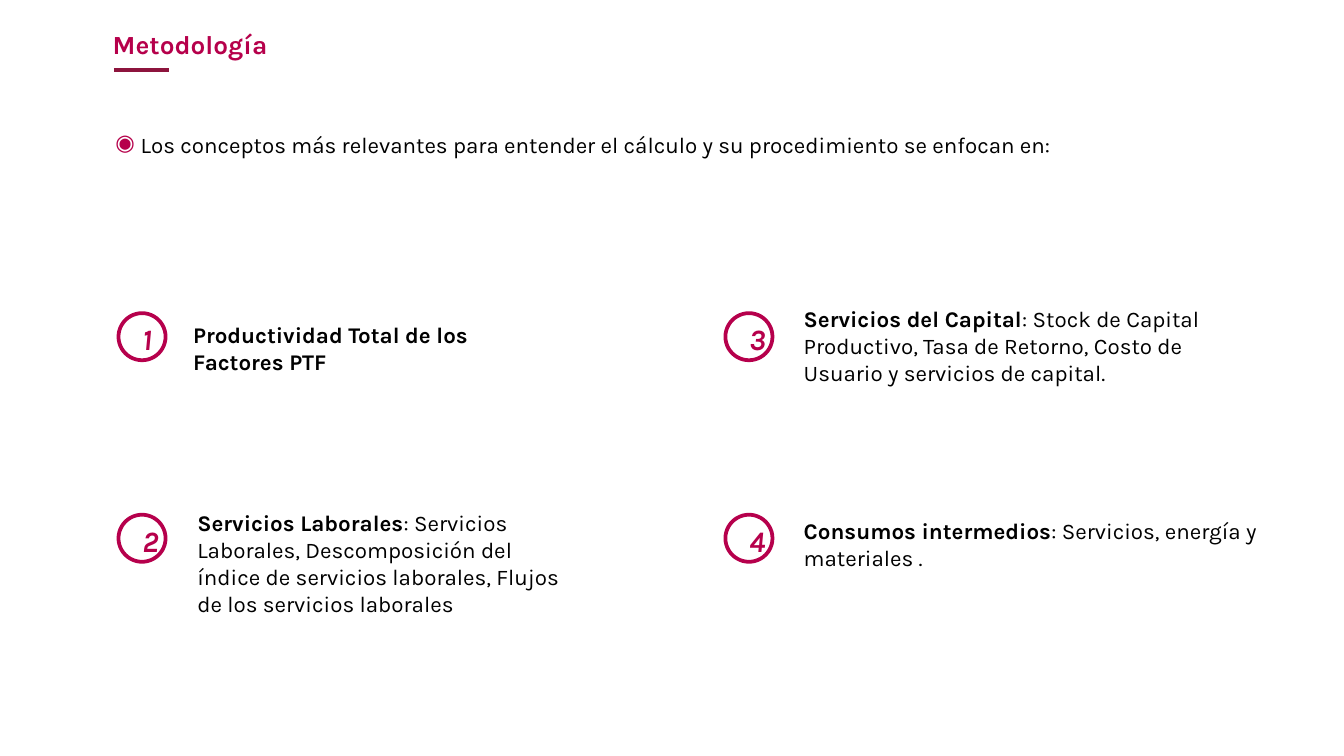
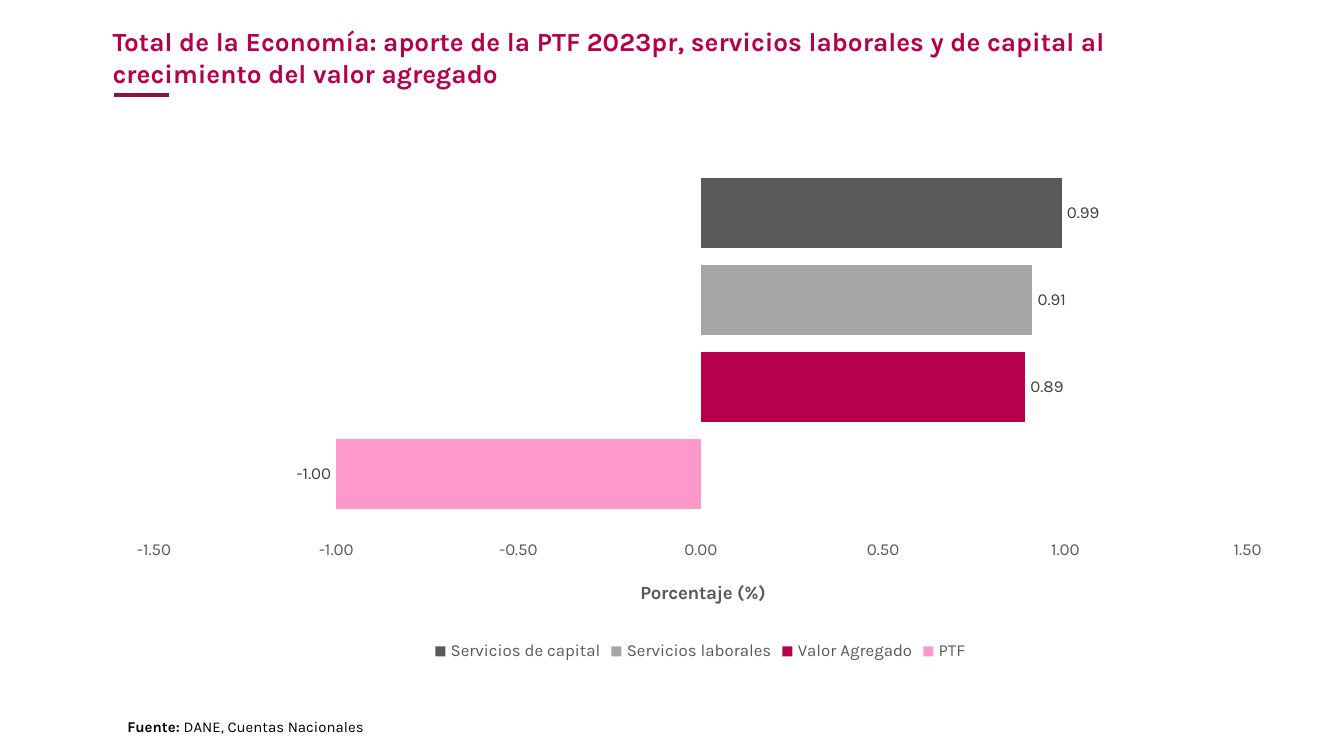
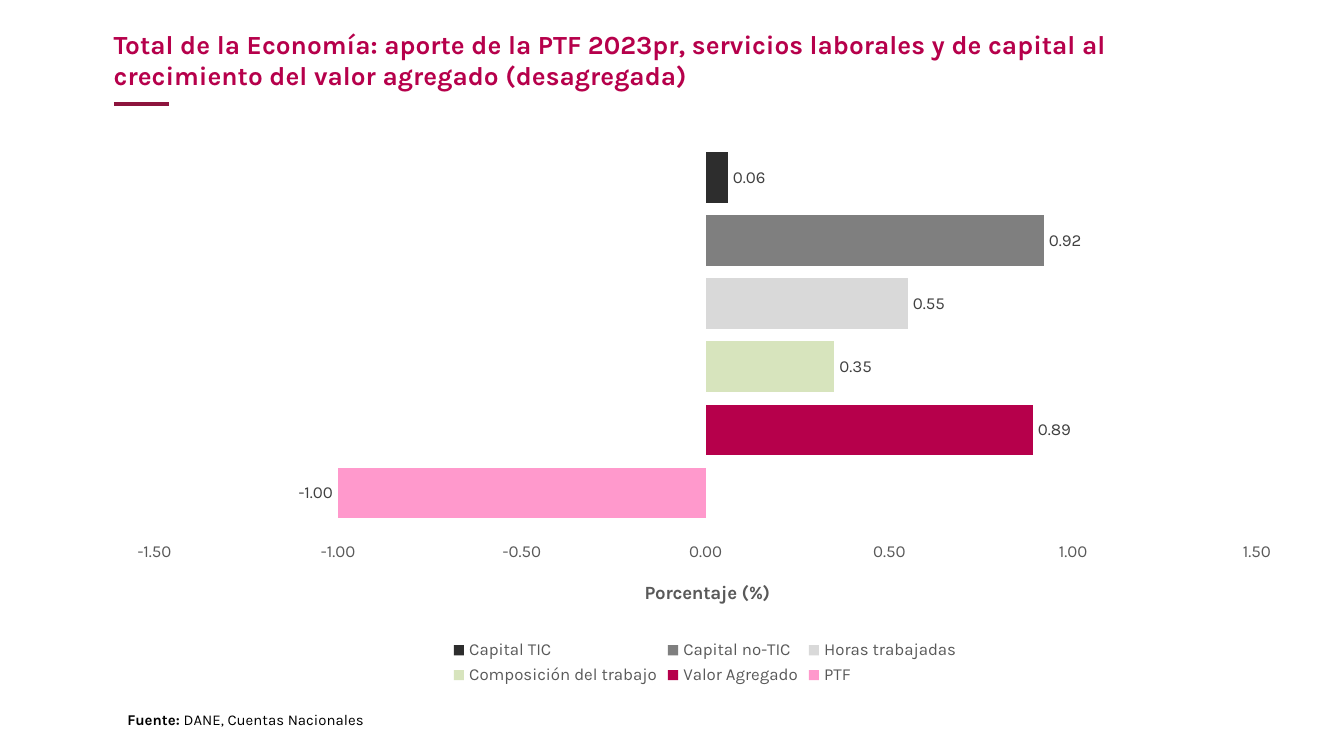
from lxml import etree
from pptx import Presentation
from pptx import util as u
from pptx.chart import data as chart_data
from pptx.dml.color import RGBColor
from pptx.enum import chart as ch, shapes, text
from pptx.oxml import ns, parse_xml

FONT = "Karla"
COLORS = {
    "accent": "B6004B",
    "ring": "B6004C",
    "rule": "8D143D",
    "body": "000000",
    "axis": "595959",
    "label": "404040",
}


def set_font(font, size, color, bold=False, italic=False):
    font.name, font.size = FONT, u.Pt(size)
    font.bold, font.italic = bold, italic
    font.color.rgb = RGBColor.from_string(color)


def add_text(parent, box, runs, size, color="body", italic=False, margins=True):
    """Add a wrapped text box; runs are (text, bold) pairs. Return its paragraph."""
    tf = parent.add_textbox(*[u.Cm(v) for v in box]).text_frame
    tf.word_wrap = True
    tf.auto_size = text.MSO_AUTO_SIZE.SHAPE_TO_FIT_TEXT
    if not margins:
        tf.margin_left = tf.margin_top = tf.margin_right = tf.margin_bottom = 0
    p = tf.paragraphs[0]
    for words, bold in runs:
        r = p.add_run()
        r.text = words
        set_font(r.font, size, COLORS[color], bold, italic)
    return p


prs = Presentation()
prs.slide_width, prs.slide_height = u.Cm(25.4), u.Cm(14.29)

# Titles with their short rule: title, box, box margins, rule height
ECONOMY = ("Total de la Economía: aporte de la PTF 2023pr, servicios laborales "
           "y de capital al crecimiento del valor agregado")
titles = [
    ("Metodología", (2.13, 0.53, 23.04, 0.61), False, 1.32),
    (ECONOMY, (1.88, 0.36, 22.15, 1.45), True, 1.8),
    (ECONOMY + " (desagregada)", (1.9, 0.41, 22.15, 1.45), True, 1.96),
]
for title, box, margins, rule_y in titles:
    s = prs.slides.add_slide(prs.slide_layouts[6])
    add_text(s.shapes, box, [(title, True)], 14, "accent", margins=margins)
    rule = s.shapes.add_connector(shapes.MSO_CONNECTOR.STRAIGHT, u.Cm(2.15),
                                  u.Cm(rule_y), u.Cm(3.2), u.Cm(rule_y))
    rule.line.color.rgb = RGBColor.from_string(COLORS["rule"])
    rule.line.width = u.Pt(2)
    etree.SubElement(rule._element.spPr, ns.qn("a:effectLst"))

# Methodology: bulleted introduction
s = prs.slides[0]
p = add_text(s.shapes, (1.93, 2.36, 23.34, 0.76),
             [("Los conceptos más relevantes para entender el cálculo y su "
               "procedimiento se enfocan en:", False)], 12)
p.alignment = text.PP_ALIGN.JUSTIFY
pPr = p._p.get_or_add_pPr()
pPr.set("marL", str(u.Cm(0.48)))
pPr.set("indent", str(u.Cm(-0.48)))
bullet_color = etree.SubElement(pPr, ns.qn("a:buClr"))
etree.SubElement(bullet_color, ns.qn("a:srgbClr"), val=COLORS["accent"])
etree.SubElement(pPr, ns.qn("a:buChar"), char="◉")

# Methodology: numbered concepts, filled column by column
concepts = [
    ((3.4, 5.94, 6.38, 1.27), "Productividad Total de los Factores PTF", ""),
    ((3.48, 9.5, 7.49, 2.31), "Servicios Laborales",
     ": Servicios Laborales, Descomposición del índice de servicios laborales, "
     "Flujos de los servicios laborales"),
    ((14.94, 5.64, 9.19, 1.8), "Servicios del Capital",
     ": Stock de Capital Productivo, Tasa de Retorno, Costo de Usuario y "
     "servicios de capital."),
    ((14.94, 9.65, 9.75, 1.27), "Consumos intermedios",
     ": Servicios, energía y materiales ."),
]
for i, (box, name, detail) in enumerate(concepts):
    x, y = 2.24 + i // 2 * 11.47, 5.92 + i % 2 * 3.81
    badge = s.shapes.add_group_shape().shapes
    sp = badge.add_shape(shapes.MSO_SHAPE.OVAL, u.Cm(x), u.Cm(y), u.Cm(0.89), u.Cm(0.89))
    sp.shadow.inherit = False
    sp.fill.background()
    sp.line.color.rgb = RGBColor.from_string(COLORS["ring"])
    sp.line.width = u.Pt(2)
    p = add_text(badge, (x + 0.22, y + 0.03, 0.48, 0.94), [(str(i + 1), True)],
                 15.8, "accent", italic=True)
    p.alignment = text.PP_ALIGN.CENTER
    runs = [(name, True), (detail, False)] if detail else [(name, True)]
    add_text(s.shapes, box, runs, 12)

# Charts: box, source height, plot height share, axis title top share, series
PTF = ("PTF", -1, "FF99CC")
VALUE_ADDED = ("Valor Agregado", 0.89, COLORS["accent"])
charts = [
    ((2.16, 2.67, 22.15, 9.93), 13.44, 0.73, 0.83, [
        PTF, VALUE_ADDED,
        ("Servicios laborales", 0.91, "A6A6A6"),
        ("Servicios de capital", 0.99, "595959"),
    ]),
    ((2.16, 2.31, 22.33, 10.74), 13.31, 0.71, 0.8, [
        PTF, VALUE_ADDED,
        ("Composición del trabajo", 0.35, "D7E4BD"),
        ("Horas trabajadas", 0.55, "D9D9D9"),
        ("Capital no-TIC", 0.92, "7F7F7F"),
        ("Capital TIC", 0.06, "2D2D2D"),
    ]),
]
LAYOUT = ('<c:layout %s><c:manualLayout>%s<c:xMode val="edge"/><c:yMode val="edge"/>'
          '<c:x val="%s"/><c:y val="%s"/>%s</c:manualLayout></c:layout>')

for s, (box, source_y, plot_h, title_y, series) in zip(list(prs.slides)[1:], charts):
    cd = chart_data.CategoryChartData(number_format="0.00")
    cd.categories = ["1"]
    for name, value, _ in series:
        cd.add_series(name, [value])
    chart = s.shapes.add_chart(ch.XL_CHART_TYPE.BAR_CLUSTERED,
                               *[u.Cm(v) for v in box], cd).chart
    set_font(chart.font, 10, COLORS["body"])
    chart.has_title = False
    chart.has_legend = True
    chart.legend.position = ch.XL_LEGEND_POSITION.BOTTOM
    chart.legend.include_in_layout = False
    set_font(chart.legend.font, 9, COLORS["axis"])

    # Bars and their labels
    plot = chart.plots[0]
    plot.gap_width, plot.overlap = 75, -25
    plot.vary_by_categories = False
    for bar, (_, _, color) in zip(plot.series, series):
        bar.invert_if_negative = False
        bar.format.fill.solid()
        bar.format.fill.fore_color.rgb = RGBColor.from_string(color)
        labels = bar.data_labels
        labels.show_value = True
        labels.number_format, labels.number_format_is_linked = "0.00", False
        labels.position = ch.XL_LABEL_POSITION.OUTSIDE_END
        set_font(labels.font, 9, COLORS["label"])

    # Axes
    chart.category_axis.visible = False
    axis = chart.value_axis
    axis.minimum_scale, axis.maximum_scale, axis.major_unit = -1.5, 1.5, 0.5
    axis.has_major_gridlines = False
    axis.major_tick_mark = ch.XL_TICK_MARK.NONE
    axis.format.line.fill.background()
    axis.tick_labels.number_format = "0.00"
    axis.tick_labels.number_format_is_linked = False
    set_font(axis.tick_labels.font, 9, COLORS["axis"])
    r = axis.axis_title.text_frame.paragraphs[0].add_run()
    r.text = "Porcentaje (%)"
    set_font(r.font, 10, COLORS["axis"], bold=True)

    # Fixed places for the axis title and the plot area
    c_ns = ns.nsdecls("c")
    title = axis.axis_title._element
    area = chart._chartSpace.chart.plotArea
    for part in (title, area):
        for old in part.findall(ns.qn("c:layout")):
            part.remove(old)
    title.find(ns.qn("c:tx")).addnext(parse_xml(LAYOUT % (c_ns, "", 0.446, title_y, "")))
    area.insert(0, parse_xml(LAYOUT % (
        c_ns, '<c:layoutTarget val="inner"/>', 0.034, 0.02,
        '<c:w val="0.933"/><c:h val="%s"/>' % plot_h)))

    # Source line
    add_text(s.shapes, (2.16, source_y, 8.92, 0.61),
             [("Fuente: ", True), ("DANE, Cuentas Nacionales", False)], 8)

prs.save("out.pptx")
